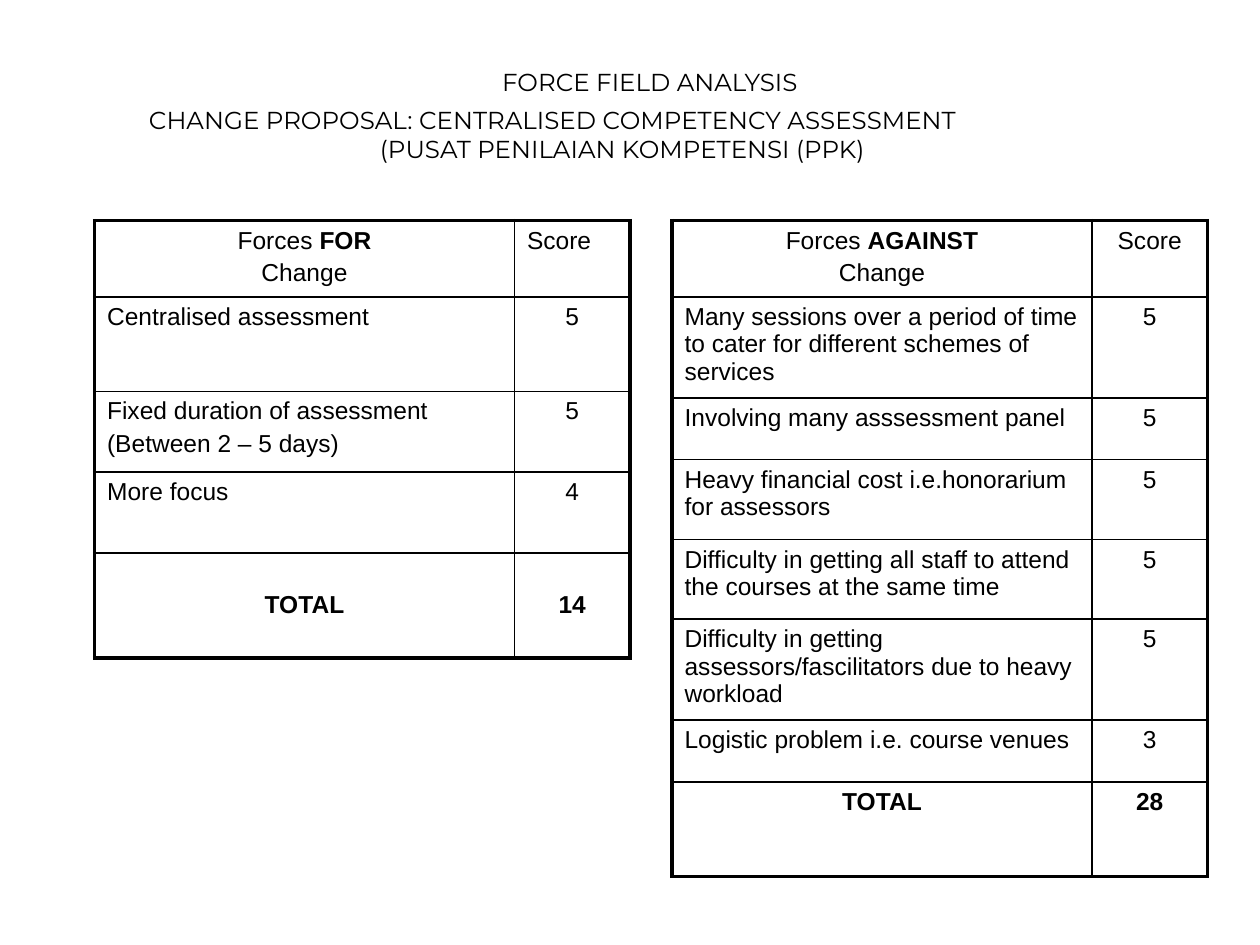
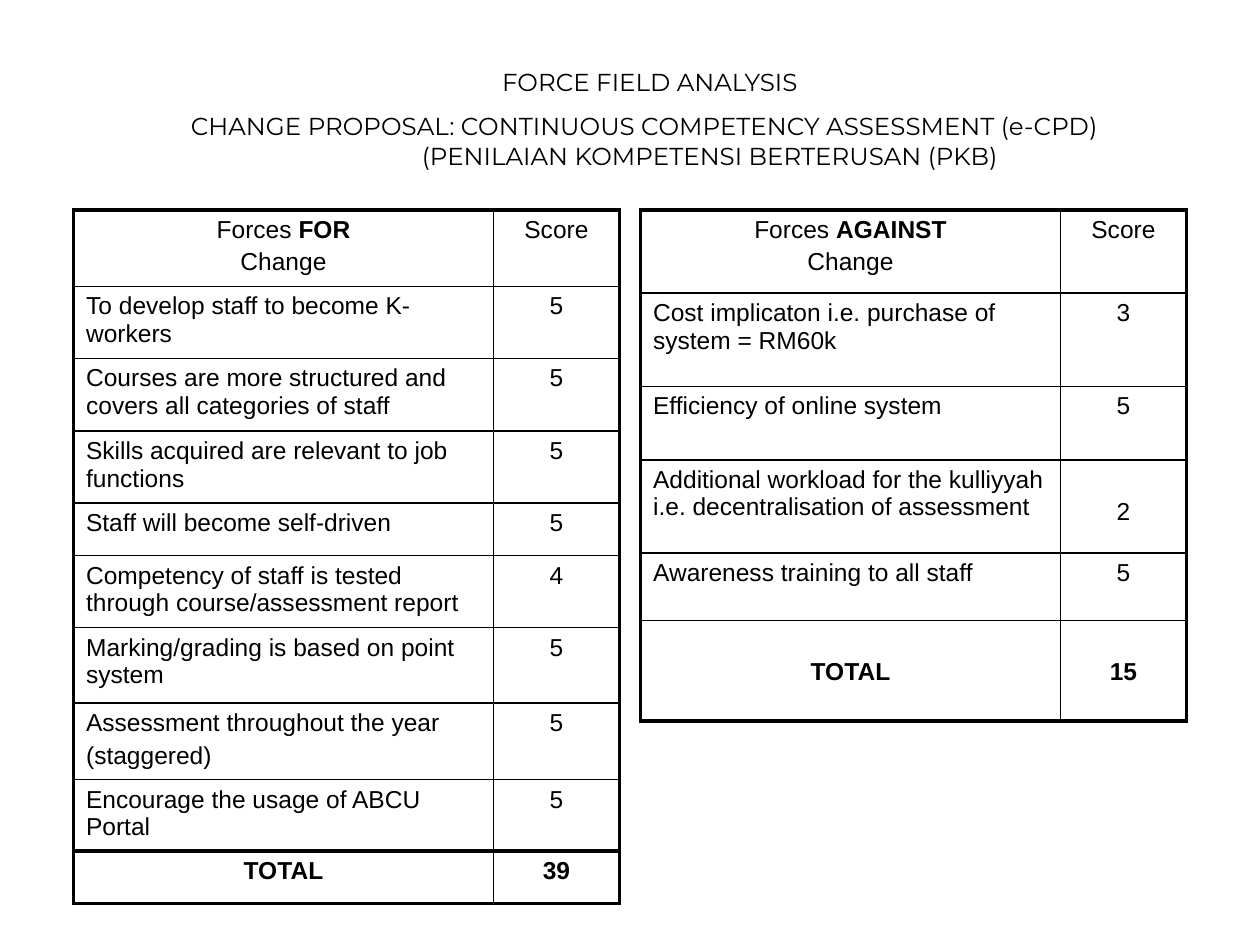
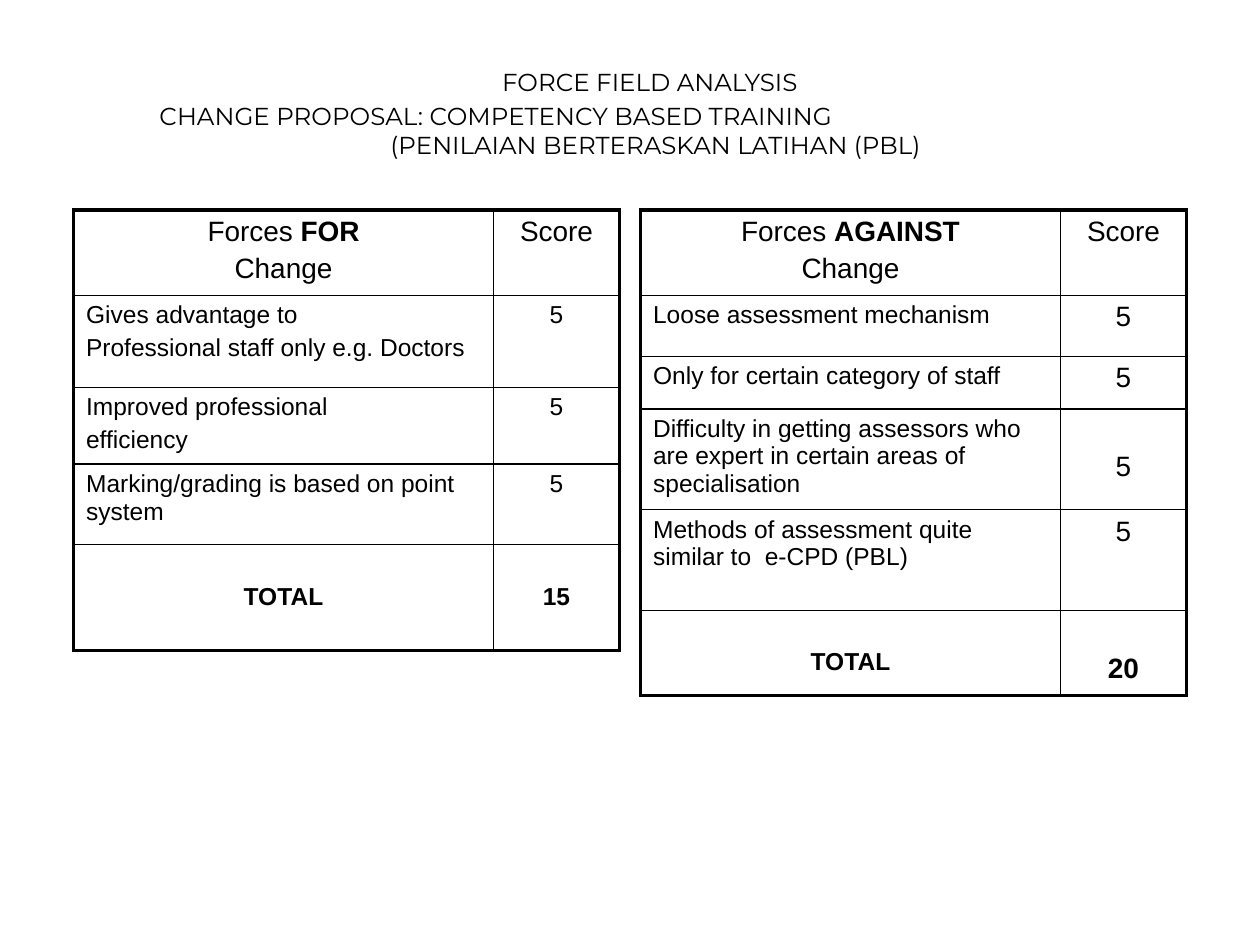
from dataclasses import dataclass
from lxml import etree
from pptx import Presentation
from pptx.dml.color import RGBColor
from pptx.enum import text
from pptx.oxml import ns
from pptx.util import Emu, Inches, Pt

# Shared look
INK = {"text": "000000", "line": "000000"}
BODY, HEAD = "Arial", "Montserrat"
SIZE, BIG = 14, 16
THICK, THIN = 2.25, 1
GAP = 0.2  # space before a paragraph, as a share of its size
WIDE, HIGH = Inches(10), Inches(7.5)
UNIT = WIDE / 120  # one grid step, for columns and rows alike
LEFT, CENTER = text.PP_ALIGN.LEFT, text.PP_ALIGN.CENTER


@dataclass
class Row:
    high: float
    label: str
    score: int
    drop: bool = False  # score sits one line lower


@dataclass
class Panel:
    side: str
    left: float
    rows: list[Row]
    total: float  # height of the total row
    drop: bool = True  # total sits one line lower
    first: float = 7.2  # height of the header row
    head: int = SIZE
    mark: int = SIZE  # size of the scores
    align: text.PP_ALIGN = CENTER  # of the score heading
    rule: float = THIN  # line above the total


@dataclass
class Page:
    left: float
    top: float
    wide: float
    lines: tuple[str, str]
    table: float  # top of both tables
    score: float  # width of the score column
    panels: list[Panel]


PAGES = [
    Page(13, 9.4, 86, ("CHANGE PROPOSAL: CENTRALISED COMPETENCY ASSESSMENT",
                       "(PUSAT PENILAIAN KOMPETENSI (PPK)"), 21, 11, [
        Panel("FOR", 9, [
            Row(9, "Centralised assessment", 5),
            Row(7.7, "Fixed duration of assessment\n(Between 2 – 5 days)", 5),
            Row(7.7, "More focus", 4),
        ], 10, align=LEFT),
        Panel("AGAINST", 64, [
            Row(9.6, "Many sessions over a period of time to cater for "
                "different schemes of services", 5),
            Row(5.9, "Involving many asssessment panel", 5),
            Row(7.6, "Heavy financial cost i.e.honorarium for assessors", 5),
            Row(7.6, "Difficulty in getting all staff to attend the courses "
                "at the same time", 5),
            Row(9.6, "Difficulty in getting assessors/fascilitators due to "
                "heavy workload", 5),
            Row(5.9, "Logistic problem i.e. course venues", 3),
        ], 9, drop=False),
    ]),
    Page(17, 10, 97, ("CHANGE PROPOSAL: CONTINUOUS COMPETENCY ASSESSMENT (e-CPD)",
                      "(PENILAIAN KOMPETENSI BERTERUSAN (PKB)"), 20, 12, [
        Panel("FOR", 7, [
            Row(6.85, "To develop staff to become K-workers", 5),
            Row(6.95, "Courses are more structured and covers all categories "
                "of staff", 5),
            Row(6.85, "Skills acquired are relevant to job functions", 5),
            Row(5, "Staff will become self-driven", 5),
            Row(6.85, "Competency of staff is tested through "
                "course/assessment report", 4),
            Row(7.2, "Marking/grading is based on point system", 5),
            Row(7.3, "Assessment throughout the year\n(staggered)", 5),
            Row(5, "Encourage the usage of ABCU Portal", 5),
        ], 5, drop=False, rule=THICK),
        Panel("AGAINST", 61, [
            Row(8.9, "Cost implicaton i.e. purchase of system = RM60k", 3),
            Row(7, "Efficiency of online system", 5),
            Row(8.9, "Additional workload for the kulliyyah i.e. "
                "decentralisation of assessment", 2, drop=True),
            Row(6.4, "Awareness training to all staff", 5),
        ], 9.6, first=7.9),
    ]),
    Page(14, 9, 86, ("CHANGE PROPOSAL: COMPETENCY BASED TRAINING",
                     "(PENILAIAN BERTERASKAN LATIHAN (PBL)"), 20, 12, [
        Panel("FOR", 7, [
            Row(8.75, "Gives advantage to\nProfessional staff only e.g. Doctors", 5),
            Row(7.3, "Improved professional\nefficiency", 5),
            Row(7.7, "Marking/grading is based on point system", 5),
        ], 10.1, first=8.1, head=BIG),
        Panel("AGAINST", 61, [
            Row(5.8, "Loose assessment mechanism", 5),
            Row(5, "Only for certain category of staff", 5),
            Row(9.6, "Difficulty in getting assessors who are expert in "
                "certain areas of specialisation", 5, drop=True),
            Row(9.6, "Methods of assessment quite similar to  e-CPD (PBL)", 5),
        ], 8.1, first=8.1, head=BIG, mark=BIG),
    ]),
]


def span(steps: float) -> Emu:
    return Emu(round(steps * UNIT))


def style(run, size: int, face: str = BODY, bold: bool = False) -> None:
    run.font.size, run.font.name, run.font.bold = Pt(size), face, bold
    run.font.color.rgb = RGBColor.from_string(INK["text"])


def caption(slide, box: tuple, lines: tuple, align=LEFT, dent: float = 0) -> None:
    """Heading text; lines after the first are indented by dent."""
    frame = slide.shapes.add_textbox(*map(span, box)).text_frame
    frame.word_wrap = True
    frame.text = "\n".join(lines)
    for i, para in enumerate(frame.paragraphs):
        para.alignment = align
        if i:
            para._p.get_or_add_pPr().set("marL", str(span(dent)))
        for run in para.runs:
            style(run, SIZE, HEAD)


def write(cell, words: str, size: int = SIZE, align=LEFT, bold: bool = False,
          drop: bool = False) -> None:
    frame = cell.text_frame
    frame.text = words
    for para in frame.paragraphs:
        para.alignment, para.space_before = align, Pt(size * GAP)
        for run in para.runs:
            style(run, size, bold=bold)
    if drop:
        cell.margin_top = Inches(0.05) + Pt(size * 1.3)


def edge(cell, widths: dict[str, float]) -> None:
    """Cell borders by side (L, R, T, B), then an empty fill."""
    props = cell._tc.get_or_add_tcPr()
    for side, width in widths.items():
        line = etree.SubElement(props, ns.qn(f"a:ln{side}"), w=str(Pt(width)))
        fill = etree.SubElement(line, ns.qn("a:solidFill"))
        etree.SubElement(fill, ns.qn("a:srgbClr"), val=INK["line"])
    cell.fill.background()


def draw(slide, page: Page, panel: Panel) -> None:
    highs = [panel.first, *(r.high for r in panel.rows), panel.total]
    wides = [40, page.score]
    last = len(highs) - 1
    grid = slide.shapes.add_table(
        len(highs), 2, span(panel.left), span(page.table),
        span(sum(wides)), span(sum(highs))).table
    grid.first_row = grid.horz_banding = False
    for col, wide in zip(grid.columns, wides):
        col.width = span(wide)

    # Borders: thick outside, thin inside
    rules = [THICK] + [THIN] * (last - 1) + [panel.rule, THICK]
    for i, high in enumerate(highs):
        grid.rows[i].height = span(high)
        for j in range(2):
            edge(grid.cell(i, j), {"L": THIN if j else THICK,
                                   "R": THICK if j else THIN,
                                   "T": rules[i], "B": rules[i + 1]})

    # Header
    top = grid.cell(0, 0)
    write(top, "Forces \nChange", panel.head, CENTER)
    run = top.text_frame.paragraphs[0].add_run()
    run.text = panel.side
    style(run, panel.head, bold=True)
    write(grid.cell(0, 1), "Score", panel.head, panel.align)

    # Forces and their total
    for i, row in enumerate(panel.rows, 1):
        write(grid.cell(i, 0), row.label)
        write(grid.cell(i, 1), str(row.score), panel.mark, CENTER, drop=row.drop)
    total = sum(r.score for r in panel.rows)
    write(grid.cell(last, 0), "TOTAL", SIZE, CENTER, True, panel.drop)
    write(grid.cell(last, 1), str(total), panel.mark, CENTER, True, panel.drop)


def main() -> None:
    deck = Presentation()
    deck.slide_width, deck.slide_height = WIDE, HIGH
    for page in PAGES:
        slide = deck.slides.add_slide(deck.slide_layouts[6])
        caption(slide, (45.1, 5.75, 33.6, 4), ("FORCE FIELD ANALYSIS",), CENTER)
        caption(slide, (page.left, page.top, page.wide, 6.85), page.lines, dent=22)
        for panel in page.panels:
            draw(slide, page, panel)
    deck.save("out.pptx")


if __name__ == "__main__":
    main()
